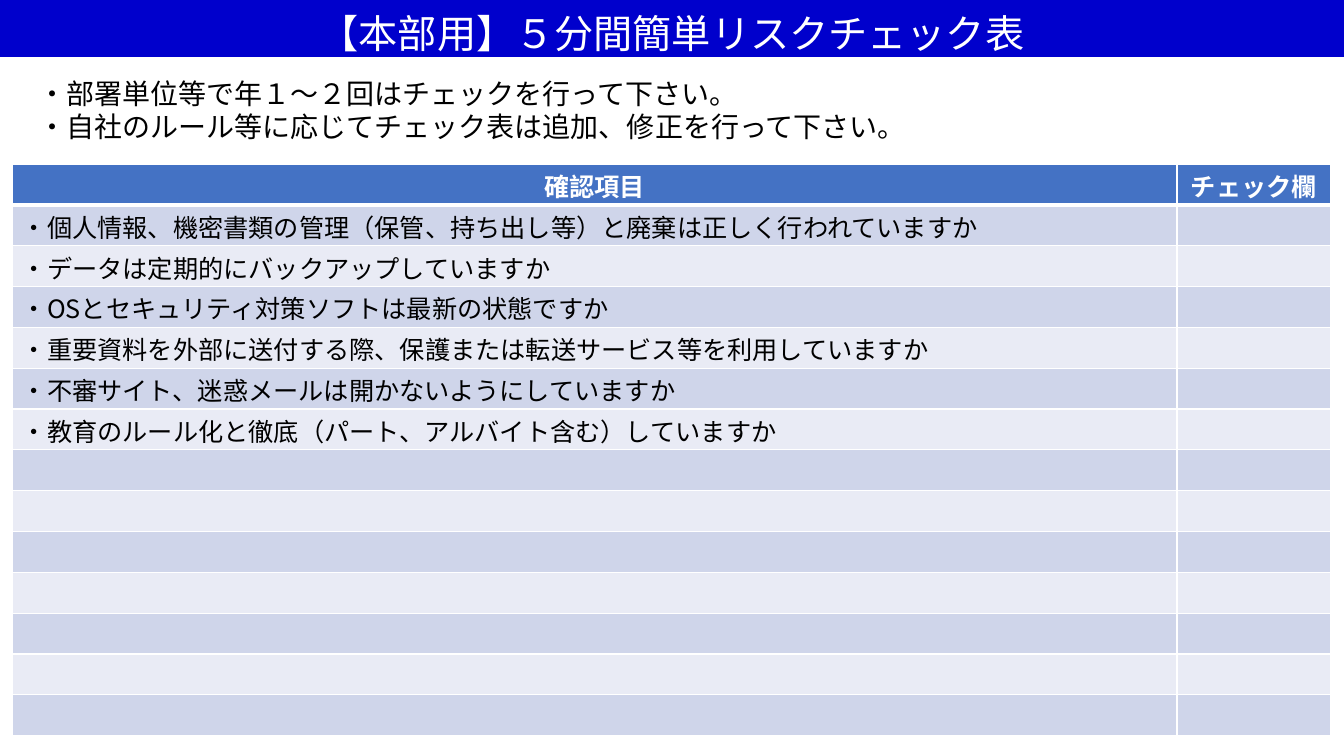
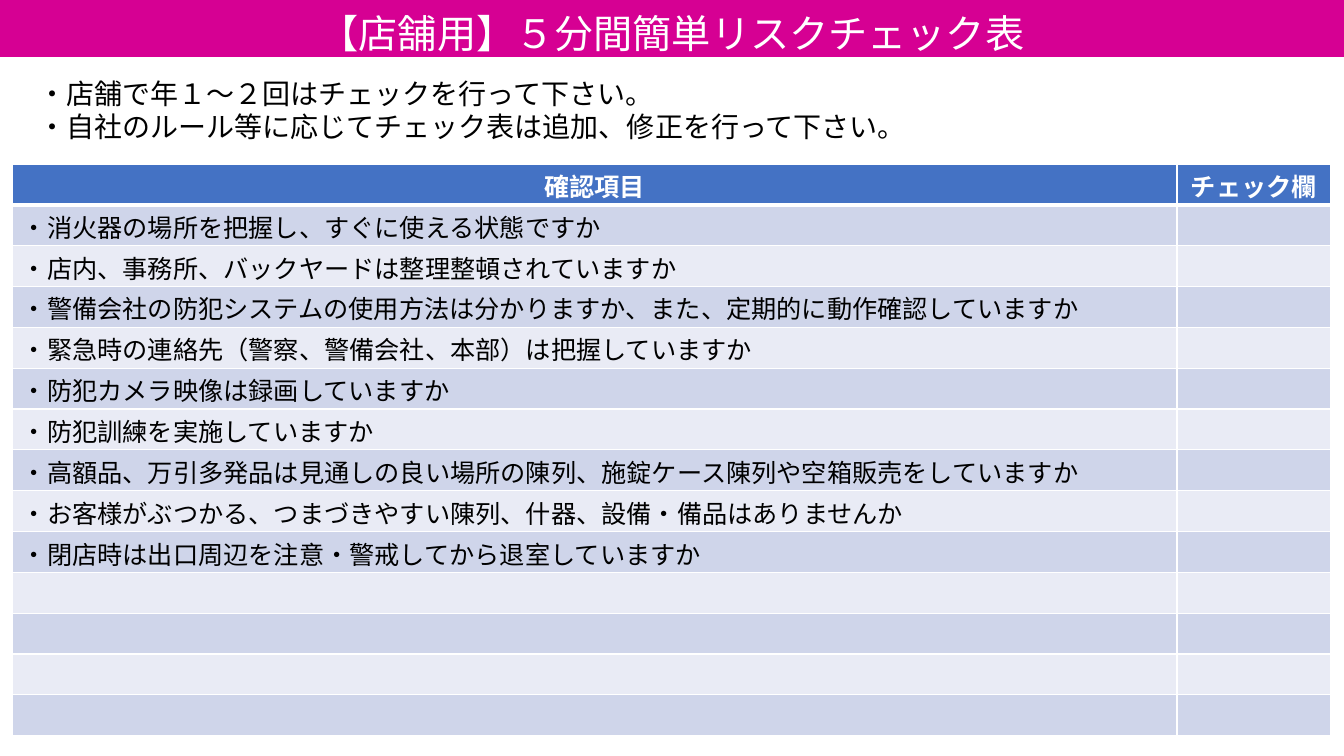
from dataclasses import dataclass

from lxml import etree
from pptx import Presentation
from pptx.dml.color import RGBColor
from pptx.enum.shapes import MSO_SHAPE
from pptx.enum.text import MSO_ANCHOR, PP_ALIGN
from pptx.oxml.ns import qn
from pptx.util import Pt

RECTANGLE = MSO_SHAPE.RECTANGLE
TOP = MSO_ANCHOR.TOP
LEFT, CENTER = PP_ALIGN.LEFT, PP_ALIGN.CENTER

# Content
HEADERS = ["確認項目", "チェック欄"]
BODY_ROWS = 13
SHARED_NOTE = "・自社のルール等に応じてチェック表は追加、修正を行って下さい。"
CHECKLISTS = [
    {
        "title": "【本部用】５分間簡単リスクチェック表",
        "band": "0000CC",
        "notes": ["・部署単位等で年１～２回はチェックを行って下さい。", SHARED_NOTE],
        "items": [
            "・個人情報、機密書類の管理（保管、持ち出し等）と廃棄は正しく行われていますか",
            "・データは定期的にバックアップしていますか",
            "・OSとセキュリティ対策ソフトは最新の状態ですか",
            "・重要資料を外部に送付する際、保護または転送サービス等を利用していますか",
            "・不審サイト、迷惑メールは開かないようにしていますか",
            "・教育のルール化と徹底（パート、アルバイト含む）していますか",
        ],
    },
    {
        "title": "【店舗用】５分間簡単リスクチェック表",
        "band": "D60093",
        "notes": ["・店舗で年１～２回はチェックを行って下さい。", SHARED_NOTE],
        "items": [
            "・消火器の場所を把握し、すぐに使える状態ですか",
            "・店内、事務所、バックヤードは整理整頓されていますか",
            "・警備会社の防犯システムの使用方法は分かりますか、また、定期的に動作確認していますか",
            "・緊急時の連絡先（警察、警備会社、本部）は把握していますか",
            "・防犯カメラ映像は録画していますか",
            "・防犯訓練を実施していますか",
            "・高額品、万引多発品は見通しの良い場所の陳列、施錠ケース陳列や空箱販売をしていますか",
            "・お客様がぶつかる、つまづきやすい陳列、什器、設備・備品はありませんか",
            "・閉店時は出口周辺を注意・警戒してから退室していますか",
        ],
    },
]


@dataclass(frozen=True)
class Theme:
    font: str = "Noto Sans CJK JP"
    title_size: int = 28
    note_size: int = 20
    table_size: int = 18
    line_ratio: float = 1.18
    white: str = "FFFFFF"
    text: str = "000000"
    header: str = "4472C4"
    stripes: tuple = ("CFD5EA", "E9EBF5")
    rule: int = 1
    header_rule: int = 3


THEME = Theme()

# Layout in px
SLIDE_WIDTH, SLIDE_HEIGHT = 1344, 756
BAND_HEIGHT = 57
NOTES_BOX = (0, 68, 925, 78)
TABLE_LEFT, TABLE_TOP, TABLE_HEIGHT = 12, 164, 572
COLUMN_WIDTHS = [1165, 154]


def px(value):
    return round(value * 914400 / 100.8)


def write(paragraph, text, size, color=THEME.text, bold=False, align=LEFT):
    paragraph.alignment = align
    paragraph.line_spacing = Pt(size * THEME.line_ratio)
    if not text:
        return
    run = paragraph.add_run()
    run.text = text
    run.font.size = Pt(size)
    run.font.bold = bold
    run.font.color.rgb = RGBColor.from_string(color)
    run.font.name = THEME.font
    east_asian = etree.SubElement(run.font._element, qn("a:ea"))
    east_asian.set("typeface", THEME.font)


def set_margins(frame, left=10, top=10, right=10, bottom=0):
    frame.margin_left, frame.margin_top = px(left), px(top)
    frame.margin_right, frame.margin_bottom = px(right), px(bottom)


def set_borders(cell, top, bottom):
    properties = cell._tc.get_or_add_tcPr()
    widths = {"L": THEME.rule, "R": THEME.rule, "T": top, "B": bottom}
    for side, width in widths.items():
        line = etree.SubElement(properties, qn(f"a:ln{side}"), w=str(Pt(width)))
        fill = etree.SubElement(line, qn("a:solidFill"))
        etree.SubElement(fill, qn("a:srgbClr"), val=THEME.white)


def add_title_band(slide, title, color):
    band = slide.shapes.add_shape(RECTANGLE, 0, 0, px(SLIDE_WIDTH), px(BAND_HEIGHT))
    band.shadow.inherit = False
    band.fill.solid()
    band.fill.fore_color.rgb = RGBColor.from_string(color)
    band.line.fill.background()
    frame = band.text_frame
    frame.word_wrap = True
    frame.vertical_anchor = TOP
    set_margins(frame)
    write(frame.paragraphs[0], title, THEME.title_size, color=THEME.white, align=CENTER)


def add_notes_text(slide, notes):
    frame = slide.shapes.add_textbox(*map(px, NOTES_BOX)).text_frame
    frame.word_wrap = True
    set_margins(frame, left=38, top=9, right=0)
    for index, note in enumerate(notes):
        paragraph = frame.add_paragraph() if index else frame.paragraphs[0]
        write(paragraph, note, THEME.note_size)


def add_check_table(slide, items):
    blanks = [""] * (BODY_ROWS - len(items))
    rows = [HEADERS] + [[item, ""] for item in items + blanks]
    table = slide.shapes.add_table(
        len(rows), len(HEADERS), px(TABLE_LEFT), px(TABLE_TOP),
        px(sum(COLUMN_WIDTHS)), px(TABLE_HEIGHT),
    ).table
    table.horz_banding = False
    for column, width in zip(table.columns, COLUMN_WIDTHS):
        column.width = px(width)
    for row_index, texts in enumerate(rows):
        table.rows[row_index].height = px(TABLE_HEIGHT / len(rows))
        is_header = row_index == 0
        fill = THEME.header if is_header else THEME.stripes[(row_index - 1) % 2]
        for column_index, text in enumerate(texts):
            cell = table.cell(row_index, column_index)
            set_margins(cell)
            set_borders(
                cell,
                top=THEME.header_rule if row_index == 1 else THEME.rule,
                bottom=THEME.header_rule if is_header else THEME.rule,
            )
            cell.fill.solid()
            cell.fill.fore_color.rgb = RGBColor.from_string(fill)
            write(
                cell.text_frame.paragraphs[0], text, THEME.table_size,
                color=THEME.white if is_header else THEME.text,
                bold=is_header, align=CENTER if is_header else LEFT,
            )


def main():
    presentation = Presentation()
    presentation.slide_width = px(SLIDE_WIDTH)
    presentation.slide_height = px(SLIDE_HEIGHT)
    for checklist in CHECKLISTS:
        slide = presentation.slides.add_slide(presentation.slide_layouts[6])
        add_title_band(slide, checklist["title"], checklist["band"])
        add_check_table(slide, checklist["items"])
        add_notes_text(slide, checklist["notes"])
    presentation.save("out.pptx")


if __name__ == "__main__":
    main()
